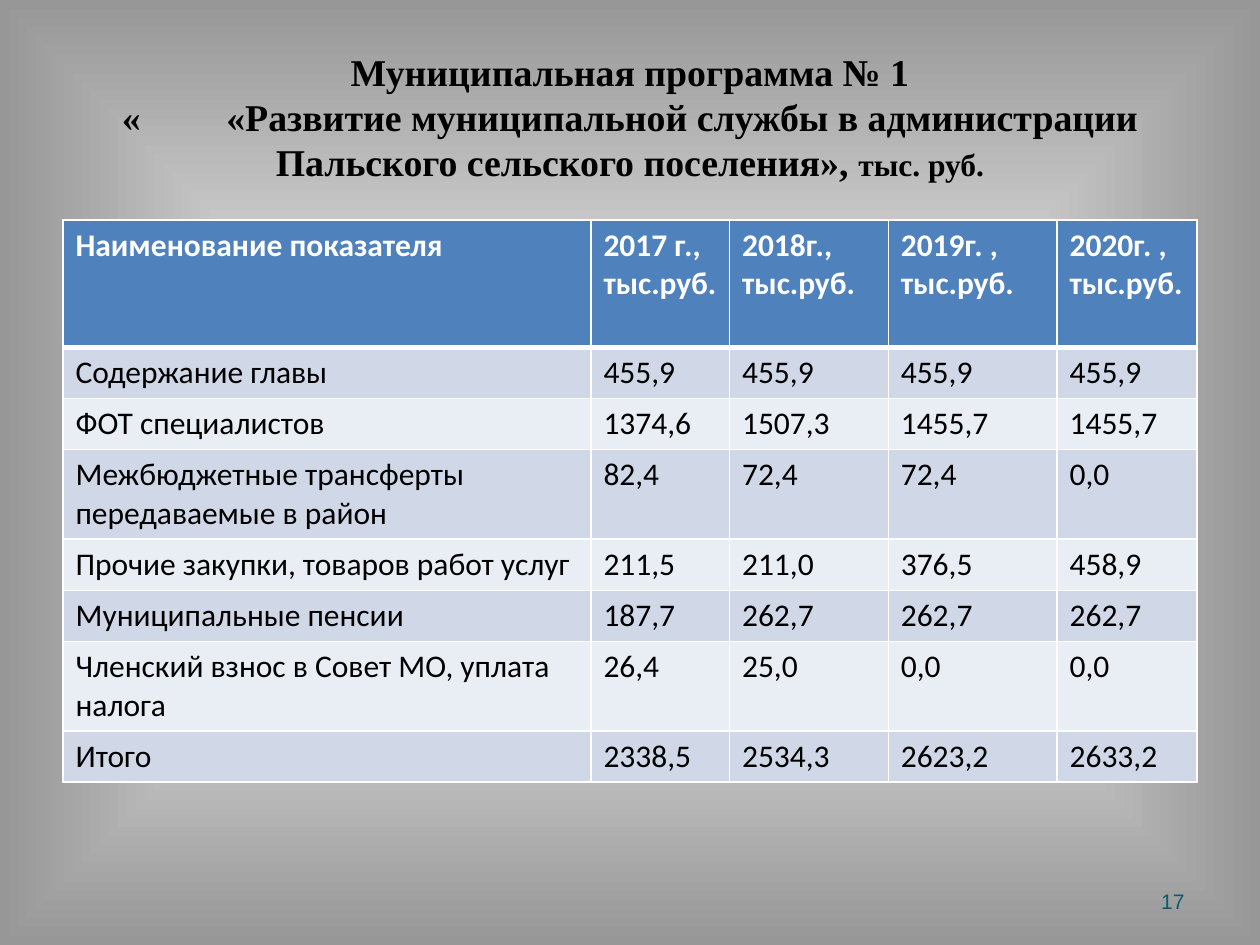
from dataclasses import dataclass

from lxml import etree
from pptx import Presentation
from pptx import util as u
from pptx.dml import color
from pptx.enum import text
from pptx.oxml import ns


@dataclass(frozen=True)
class Theme:
    ink: str = "000000"
    white: str = "FFFFFF"
    edge: str = "979797"
    header: str = "4F81BD"
    bands: tuple = ("D0D8E8", "E9EDF4")
    number: str = "045C75"
    serif: str = "Times New Roman"
    body: str = "Calibri"
    sans: str = "Arial"
    title_size: float = 21.6
    text_size: float = 18
    number_size: float = 12


theme = Theme()


def add_span(para, words, font, size, tint, bold=False):
    span = para.add_run()
    span.text = words
    span.font.name = font
    span.font.size = u.Pt(size)
    span.font.bold = bold
    span.font.color.rgb = color.RGBColor.from_string(tint)
    return span


def add_border(cell, side, width):
    properties = cell._tc.get_or_add_tcPr()
    line = etree.SubElement(properties, ns.qn(f"a:ln{side}"), w=str(u.Pt(width)))
    fill = etree.SubElement(line, ns.qn("a:solidFill"))
    etree.SubElement(fill, ns.qn("a:srgbClr"), val=theme.white)


deck = Presentation()
deck.slide_width, deck.slide_height = u.Inches(10), u.Inches(7.5)
width, height = deck.slide_width, deck.slide_height
margin = int(width * 0.05)
content_width = width - 2 * margin
page = deck.slides.add_slide(deck.slide_layouts[5])

backdrop = page.background.fill
backdrop.gradient()
for stop, tint, position in zip(backdrop.gradient_stops, (theme.white, theme.edge), (0, 1)):
    stop.color.rgb = color.RGBColor.from_string(tint)
    stop.position = position
gradient = page.element.find(".//" + ns.qn("a:gradFill"))
gradient.remove(gradient.find(ns.qn("a:lin")))
shade = etree.SubElement(gradient, ns.qn("a:path"), path="shape")
etree.SubElement(shade, ns.qn("a:fillToRect"), l="50000", t="50000", r="50000", b="50000")

title = page.shapes.title
title.left, title.top = margin, int(height * 0.04)
title.width, title.height = content_width, int(height / 6)
title.text_frame.vertical_anchor = text.MSO_ANCHOR.MIDDLE
title.text_frame.auto_size = text.MSO_AUTO_SIZE.NONE
para = title.text_frame.paragraphs[0]
para.alignment = text.PP_ALIGN.CENTER
heading = (theme.serif, theme.title_size, theme.ink, True)
add_span(para, "Муниципальная программа № 1", *heading)
para.add_line_break()
add_span(para, "«", *heading)
gap = add_span(para, " ", *heading)
gap.font._element.set("spc", "4350")
add_span(para, "«Развитие муниципальной службы в администрации Пальского сельского поселения», ", *heading)
add_span(para, "тыс. руб.", theme.serif, theme.text_size, theme.ink, True)

rows = [
    ("Наименование показателя", "2017 г., тыс.руб.", "2018г., тыс.руб.", "2019г. , тыс.руб.", "2020г. , тыс.руб."),
    ("Содержание главы", "455,9", "455,9", "455,9", "455,9"),
    ("ФОТ специалистов", "1374,6", "1507,3", "1455,7", "1455,7"),
    ("Межбюджетные трансферты передаваемые в район", "82,4", "72,4", "72,4", "0,0"),
    ("Прочие закупки, товаров работ услуг", "211,5", "211,0", "376,5", "458,9"),
    ("Муниципальные пенсии", "187,7", "262,7", "262,7", "262,7"),
    ("Членский взнос в Совет МО, уплата налога", "26,4", "25,0", "0,0", "0,0"),
    ("Итого", "2338,5", "2534,3", "2623,2", "2633,2"),
]
column_widths = (4.19, 1.1, 1.26, 1.34, 1.11)
single, double, header_height = 0.405, 0.71, 1.01
row_heights = (header_height, single, single, double, single, single, double, single)

frame = page.shapes.add_table(
    len(rows), len(column_widths), margin, int(height * 0.233), content_width, u.Inches(sum(row_heights))
)
table = frame.table
for column, share in zip(table.columns, column_widths):
    column.width = int(content_width * share / sum(column_widths))
for index, (row, values, row_height) in enumerate(zip(table.rows, rows, row_heights)):
    row.height = u.Inches(row_height)
    is_header = index == 0
    fill = theme.header if is_header else theme.bands[(index - 1) % 2]
    borders = {"L": 1, "R": 1, "T": 3 if index == 1 else 1, "B": 3 if is_header else 1}
    for cell, value in zip(row.cells, values):
        for side, weight in borders.items():
            add_border(cell, side, weight)
        cell.fill.solid()
        cell.fill.fore_color.rgb = color.RGBColor.from_string(fill)
        tint = theme.white if is_header else theme.ink
        add_span(cell.text_frame.paragraphs[0], value, theme.body, theme.text_size, tint, is_header)

box = page.shapes.add_textbox(
    int(width * 0.717), int(height * 0.927), int(width * 0.233), int(height * 0.053)
)
box.text_frame.word_wrap = True
box.text_frame.vertical_anchor = text.MSO_ANCHOR.MIDDLE
para = box.text_frame.paragraphs[0]
para.alignment = text.PP_ALIGN.RIGHT
add_span(para, "17", theme.sans, theme.number_size, theme.number)

deck.save("out.pptx")
